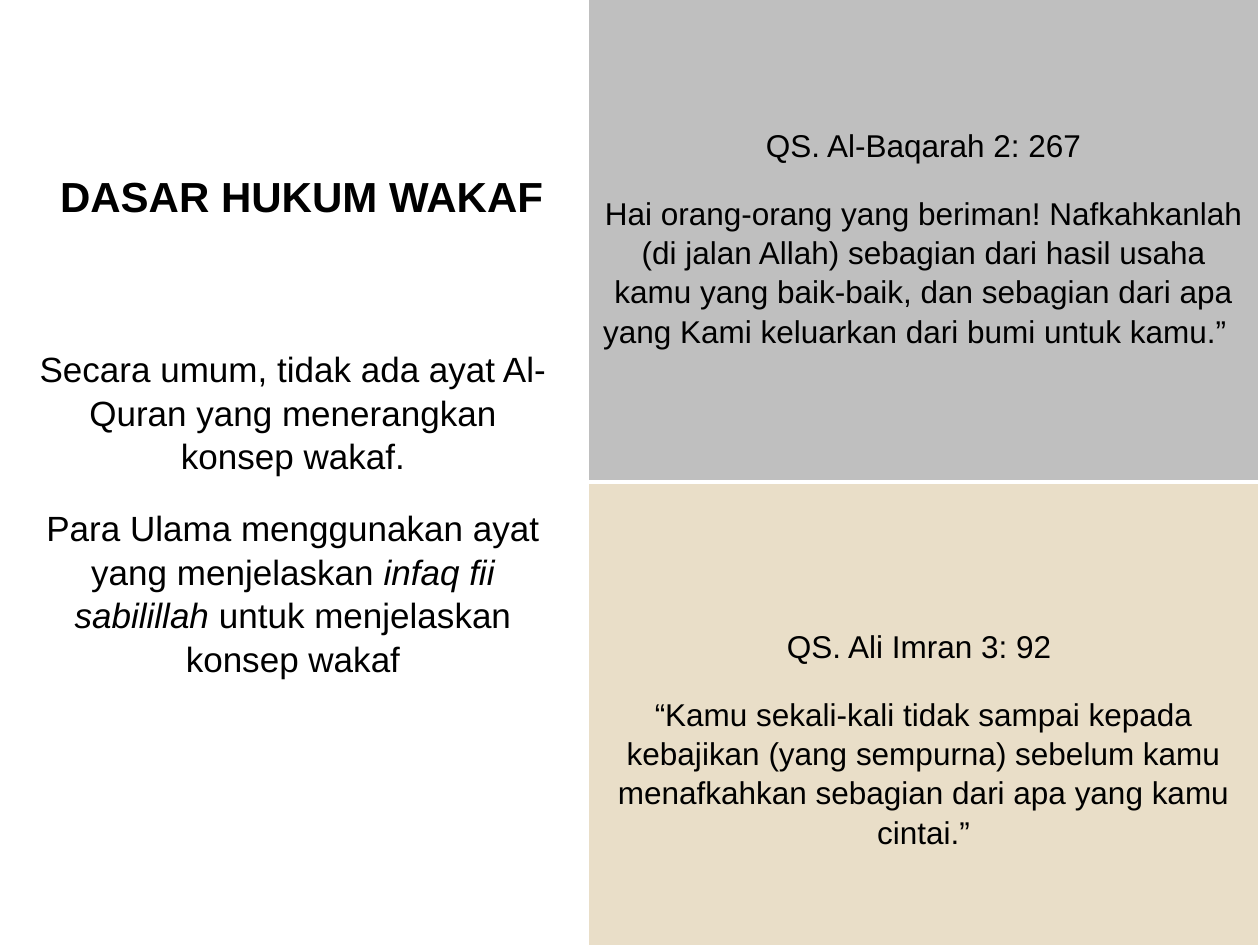
from dataclasses import dataclass
from typing import Optional

from pptx import Presentation
from pptx import util as u
from pptx.dml.color import RGBColor
from pptx.enum import shapes, text

EMU_PER_PX = 914400 / 126
INSET = 13
BLACK = RGBColor(0x00, 0x00, 0x00)
WHITE = RGBColor(0xFF, 0xFF, 0xFF)
GREY = RGBColor(0xBF, 0xBF, 0xBF)
SAND = RGBColor(0xE9, 0xDE, 0xC8)
PARAGRAPH = {
    "alignment": text.PP_ALIGN.CENTER,
    "space_before": u.Pt(0),
    "space_after": u.Pt(16),
    "line_spacing": 1.04,
}


@dataclass(frozen=True)
class Run:
    words: str
    italic: bool = False


@dataclass(frozen=True)
class Block:
    left: int
    top: int
    width: int
    height: int
    size: int
    paragraphs: tuple[tuple[Run, ...], ...]
    bold: bool = False
    fill: Optional[RGBColor] = None
    top_inset: int = INSET


BLOCKS = (
    Block(16, 333, 554, 644, 20, (
        (Run("Secara umum, tidak ada ayat Al-Quran yang menerangkan konsep wakaf."),),
        (Run("Para Ulama menggunakan ayat yang menjelaskan "),
         Run("infaq fii sabilillah ", italic=True),
         Run("untuk menjelaskan konsep wakaf")),
    )),
    Block(587, -19, 673, 501, 18, (
        (Run("QS. Al-Baqarah 2: 267"),),
        (Run("Hai orang-orang yang beriman! Nafkahkanlah (di jalan Allah) sebagian "
             "dari hasil usaha kamu yang baik-baik, dan sebagian dari apa yang Kami "
             "keluarkan dari bumi untuk kamu.”  "),),
    ), fill=GREY, top_inset=144),
    Block(587, 482, 673, 494, 18, (
        (Run("QS. Ali Imran 3: 92 "),),
        (Run("“Kamu sekali-kali tidak sampai kepada kebajikan (yang sempurna) sebelum "
             "kamu menafkahkan sebagian dari apa yang kamu cintai.”"),),
    ), fill=SAND, top_inset=144),
    Block(16, 155, 571, 107, 24, ((Run("DASAR HUKUM WAKAF"),),), bold=True),
)


def px(n: int) -> u.Emu:
    return u.Emu(round(n * EMU_PER_PX))


def set_all(target, values: dict) -> None:
    for name, value in values.items():
        setattr(target, name, value)


def write(tf, block: Block) -> None:
    set_all(tf, {
        "word_wrap": True,
        "vertical_anchor": text.MSO_ANCHOR.TOP,
        "margin_left": px(INSET),
        "margin_right": px(INSET),
        "margin_top": px(block.top_inset),
        "margin_bottom": px(INSET),
    })
    for i, runs in enumerate(block.paragraphs):
        p = tf.add_paragraph() if i else tf.paragraphs[0]
        set_all(p, PARAGRAPH)
        for run in runs:
            r = p.add_run()
            r.text = run.words
            set_all(r.font, {"name": "Arial", "size": u.Pt(block.size),
                             "bold": block.bold, "italic": run.italic})
            r.font.color.rgb = BLACK


def draw(s, block: Block) -> None:
    box = [px(n) for n in (block.left, block.top, block.width, block.height)]
    if block.fill is None:
        sp = s.shapes.add_textbox(*box)
    else:
        sp = s.shapes.add_shape(shapes.MSO_SHAPE.RECTANGLE, *box)
        sp.shadow.inherit = False
        sp.fill.solid()
        sp.fill.fore_color.rgb = block.fill
        sp.line.color.rgb = WHITE
        sp.line.width = u.Pt(2)
    write(sp.text_frame, block)


def main() -> None:
    prs = Presentation()
    set_all(prs, {"slide_width": px(1260), "slide_height": px(945)})
    s = prs.slides.add_slide(prs.slide_layouts[6])
    for block in BLOCKS:
        draw(s, block)
    prs.save("out.pptx")


if __name__ == "__main__":
    main()
